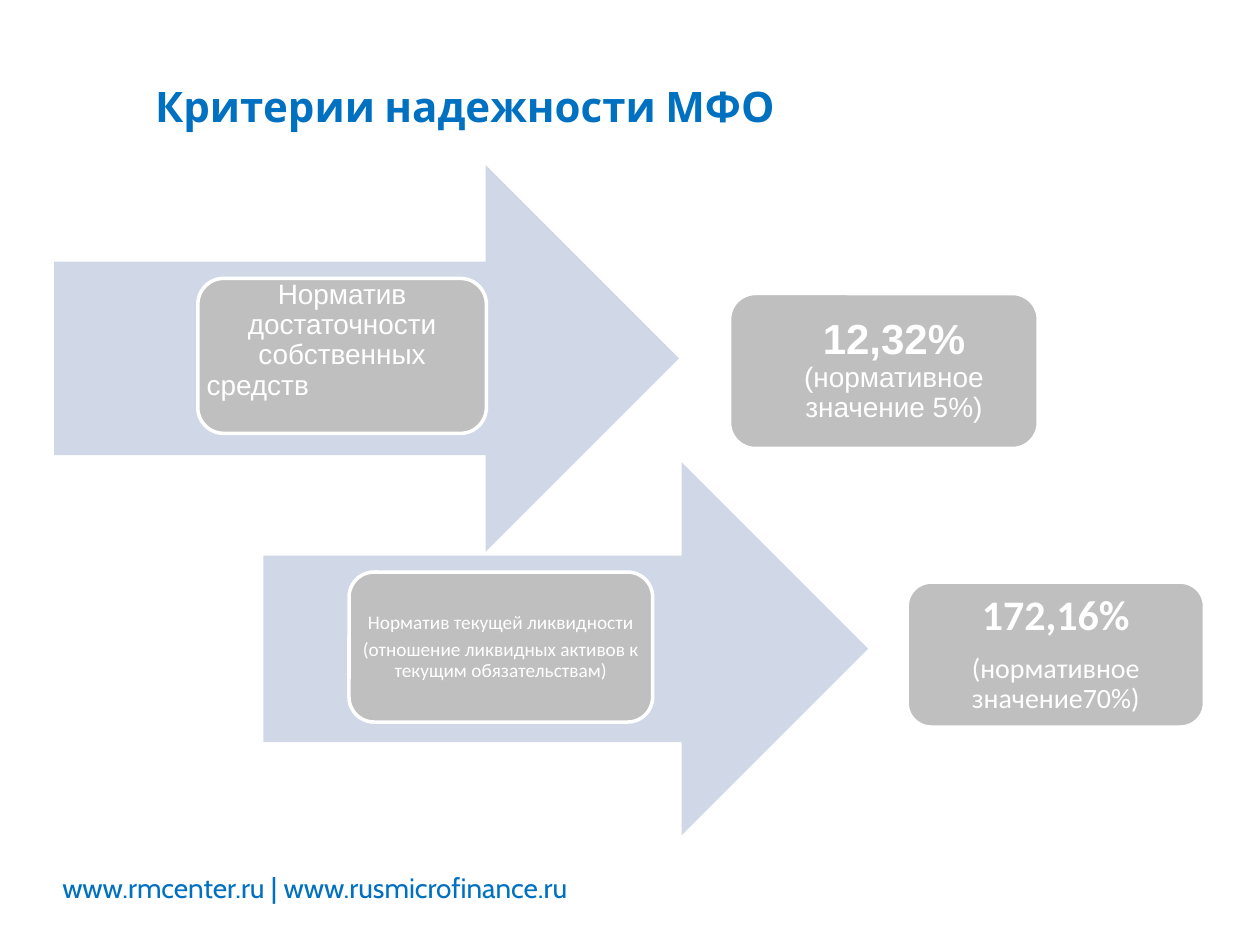
import pptx
import pptx.util
import pptx.dml.color
import pptx.enum.shapes
import pptx.enum.text

Inches = pptx.util.Inches
Pt = pptx.util.Pt
RGBColor = pptx.dml.color.RGBColor
Shape = pptx.enum.shapes.MSO_SHAPE
Align = pptx.enum.text.PP_ALIGN
Anchor = pptx.enum.text.MSO_ANCHOR

BLUE = RGBColor(0x00, 0x70, 0xC0)
PALE = RGBColor(0xD0, 0xD8, 0xE8)
GREY = RGBColor(0xBF, 0xBF, 0xBF)
WHITE = RGBColor(0xFF, 0xFF, 0xFF)


def style(run, font, size, color, bold=False):
    """Set the look of one run."""
    run.font.name = font
    run.font.size = Pt(size)
    run.font.color.rgb = color
    run.font.bold = bold


def caption(slide, box, text, size, bold, anchor):
    """Place one centred blue line in the box."""
    frame = slide.shapes.add_textbox(*map(Inches, box)).text_frame
    frame.word_wrap = True
    frame.vertical_anchor = anchor
    frame.text = text
    line = frame.paragraphs[0]
    line.alignment = Align.CENTER
    style(line.runs[0], "Cabin", size, BLUE, bold)


def arrow(slide, box):
    """Place a pale block arrow in the box."""
    shape = slide.shapes.add_shape(Shape.RIGHT_ARROW, *map(Inches, box))
    shape.shadow.inherit = False
    shape.fill.solid()
    shape.fill.fore_color.rgb = PALE
    shape.line.fill.background()


def card(slide, box, insets, font, lines, gap=0.35):
    """Place a grey rounded card; each line is an alignment and its runs."""
    shape = slide.shapes.add_shape(Shape.ROUNDED_RECTANGLE, *map(Inches, box))
    shape.shadow.inherit = False
    shape.fill.solid()
    shape.fill.fore_color.rgb = GREY
    shape.line.color.rgb = WHITE
    shape.line.width = Pt(2)
    frame = shape.text_frame
    frame.word_wrap = True
    frame.vertical_anchor = Anchor.MIDDLE
    (frame.margin_left, frame.margin_top,
     frame.margin_right, frame.margin_bottom) = map(Inches, insets)
    for index, (align, runs) in enumerate(lines):
        line = frame.add_paragraph() if index else frame.paragraphs[0]
        line.alignment = align
        line.line_spacing = 0.9
        line.space_after = Pt(runs[0][1] * gap if index < len(lines) - 1 else 0)
        for text, size, bold in runs:
            run = line.add_run()
            run.text = text
            style(run, font, size, WHITE, bold)


def capital(slide, left, top):
    """Place the capital ratio: arrow, label and value."""
    arrow(slide, (left, top, 4.96, 3.07))
    card(slide, (left + 1.14, top + 0.9, 2.29, 1.23), (0.01, 0, 0.01, 0.24), "Arial", [
        (Align.CENTER, [("Норматив достаточности собственных", 16, False)]),
        (Align.LEFT, [("средств", 16, False)]),
    ], gap=0)
    card(slide, (left + 5.36, top + 1.02, 2.45, 1.23), (0.18, 0.04, 0.02, 0.04), "Arial", [
        (Align.CENTER, [("12,32% ", 24, True), ("(нормативное значение 5%)", 16, False)]),
    ])


def liquid(slide, left, top):
    """Place the liquidity ratio: arrow, label and value."""
    arrow(slide, (left, top, 4.8, 2.96))
    card(slide, (left + 0.68, top + 0.87, 2.41, 1.19), (0, 0, 0, 0), "Calibri", [
        (Align.CENTER, [("Норматив текущей ликвидности", 11, False)]),
        (Align.CENTER, [("(отношение ликвидных активов к текущим обязательствам)", 11, False)]),
    ])
    card(slide, (left + 5.11, top + 0.95, 2.36, 1.15), (0.1, 0.04, 0.1, 0.04), "Calibri", [
        (Align.CENTER, [("172,16%", 24, True)]),
        (Align.CENTER, [("(нормативное значение70%)", 16, False)]),
    ])


def main():
    """Build the slide and save it."""
    deck = pptx.Presentation()
    deck.slide_width, deck.slide_height = Inches(10), Inches(7.5)
    slide = deck.slides.add_slide(deck.slide_layouts[6])
    caption(slide, (0, 6.86, 5, 0.64), "www.rmcenter.ru | www.rusmicrofinance.ru",
            16, False, Anchor.TOP)
    caption(slide, (0.33, 0.56, 6.72, 0.55), "Критерии надежности МФО",
            24, True, Anchor.MIDDLE)
    capital(slide, 0.43, 1.31)
    liquid(slide, 2.09, 3.67)
    deck.save("out.pptx")


if __name__ == "__main__":
    main()
